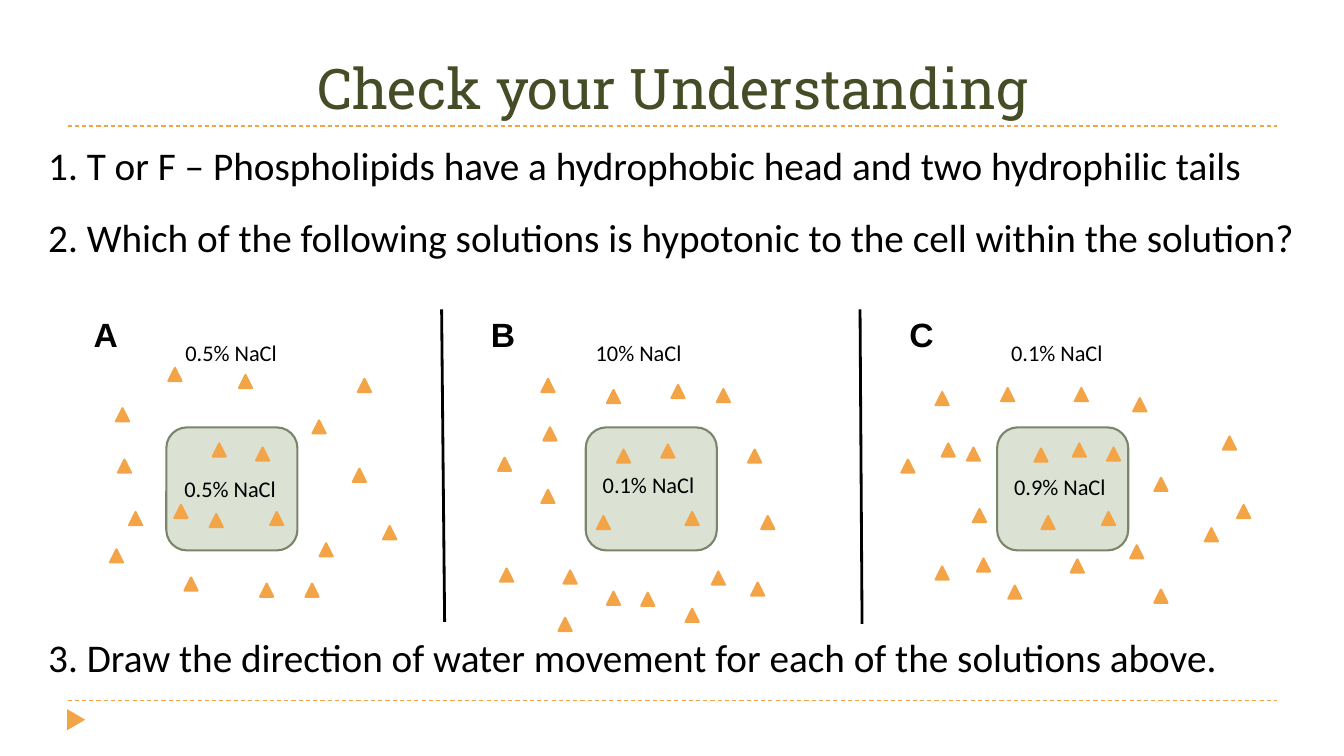
from lxml.etree import SubElement
from pptx import Presentation
from pptx.dml.color import RGBColor
from pptx.enum.dml import MSO_LINE
from pptx.enum.shapes import MSO_CONNECTOR, MSO_SHAPE
from pptx.enum.text import MSO_ANCHOR, PP_ALIGN
from pptx.oxml.ns import qn
from pptx.util import Inches, Pt

ORANGE, OLIVE, BLACK = "F3A447", "444D26", "000000"
SAGE, MOSS = "DBE1D3", "7A866C"
GRAIN = 1.3
CELL = (13, 12.2)
CELL_TOP = 42.4

PANELS = [
    {
        "letter": ("A", 8.3),
        "cell": 16.5,
        "labels": [("0.5% NaCl", 17.4, 33.2), ("0.5% NaCl", 17.3, 46.6)],
        "grains": [
            (11.5, 40.5), (10.9, 54.5), (31.7, 53.9), (11.7, 45.6),
            (16.7, 36.5), (18.3, 57.3), (26.8, 50.8), (17.3, 50.1),
            (25.4, 44.4), (35, 46.5), (20.8, 51), (21.1, 44),
            (31, 41.7), (35.5, 37.6), (23.7, 37.2), (30.3, 57.9),
            (25.8, 57.9), (38, 52.2), (12.8, 50.8),
        ],
    },
    {
        "letter": ("B", 47.7),
        "cell": 58.1,
        "labels": [("10% NaCl", 58.1, 33.2), ("0.1% NaCl", 58.8, 46.3)],
        "grains": [
            (53.7, 37.6), (53.9, 42.4), (60.2, 38.7), (74.2, 44.6),
            (68, 60.4), (75.5, 51.2), (55.9, 56.6), (71.1, 38.6),
            (68, 50.8), (59.2, 51.2), (53.7, 48.6), (65.6, 44.1),
            (74.5, 57.8), (63.6, 58.8), (61.2, 44.6), (66.6, 38.2),
            (60.2, 58.7), (49.4, 45.4), (55.4, 61.3), (70.6, 56.7),
            (49.6, 56.4),
        ],
    },
    {
        "letter": ("C", 89.2),
        "cell": 98.9,
        "labels": [("0.1% NaCl", 99.3, 33.2), ("0.9% NaCl", 99.6, 46.4)],
        "grains": [
            (92.8, 38.9), (112.4, 39.5), (95.9, 44.4), (99.3, 38.5),
            (114.5, 47.4), (106.6, 38.5), (96.5, 50.5), (106.2, 55.5),
            (100, 58.1), (112.1, 54.1), (109.8, 44.4), (121.3, 43.3),
            (93.4, 44), (89.4, 45.6), (96.9, 55.4), (92.8, 56.2),
            (103.3, 51.2), (109.3, 50.8), (102.6, 44.5), (119.5, 52.4),
            (122.7, 50.1), (114.5, 58.5), (106.4, 44),
        ],
    },
]


def grid(*cells):
    """Turn columns and rows of a tenth of an inch into lengths."""
    return [Inches(cell / 10) for cell in cells]


def paint(color):
    """Return the colour for a hex string."""
    return RGBColor.from_string(color)


def add_line(slide, ends, color, width, dash=None):
    """Draw a straight line between two grid points."""
    line = slide.shapes.add_connector(MSO_CONNECTOR.STRAIGHT, *grid(*ends))
    line.line.color.rgb = paint(color)
    line.line.width = Pt(width)
    if dash:
        line.line.dash_style = dash
    SubElement(line._element.spPr, qn("a:effectLst"))


def add_form(slide, kind, box, fill, edge=None):
    """Draw a filled preset shape, with an edge if one is given."""
    form = slide.shapes.add_shape(kind, *grid(*box))
    form.shadow.inherit = False
    form.fill.solid()
    form.fill.fore_color.rgb = paint(fill)
    if edge:
        form.line.color.rgb = paint(edge)
        form.line.width = Pt(1.5)
    else:
        form.line.fill.background()
    return form


def add_text(slide, box, lines, font, size, color=BLACK, bold=False,
             align=PP_ALIGN.LEFT, anchor=MSO_ANCHOR.TOP, gap=0):
    """Write lines of text in one box."""
    frame = slide.shapes.add_textbox(*grid(*box)).text_frame
    frame.word_wrap = True
    frame.vertical_anchor = anchor
    frame.text = "\n".join(lines)
    for part in frame.paragraphs:
        part.alignment = align
        part.space_after = Pt(gap)
        for run in part.runs:
            run.font.name = font
            run.font.size = Pt(size)
            run.font.bold = bold
            run.font.color.rgb = paint(color)


def add_panel(slide, panel):
    """Draw one cell in its solution with labels and grains."""
    add_form(slide, MSO_SHAPE.ROUNDED_RECTANGLE,
             (panel["cell"], CELL_TOP, *CELL), SAGE, MOSS)
    letter, left = panel["letter"]
    add_text(slide, (left, 30.7, 3.3, 5), [letter], "Arial", 24, bold=True)
    for label, left, top in panel["labels"]:
        add_text(slide, (left, top, 13, 3.7), [label], "Calibri", 16)
    for left, top in panel["grains"]:
        add_form(slide, MSO_SHAPE.ISOSCELES_TRIANGLE,
                 (left, top, GRAIN, GRAIN), ORANGE, ORANGE)


def main():
    """Build the slide and save it."""
    deck = Presentation()
    deck.slide_width, deck.slide_height = grid(133.3, 75)
    slide = deck.slides.add_slide(deck.slide_layouts[6])
    for row in (69.5, 12.5):
        add_line(slide, (6.7, row, 126.7, row), ORANGE, 0.75, MSO_LINE.DASH)
    mark = add_form(slide, MSO_SHAPE.ISOSCELES_TRIANGLE,
                    (6.5, 70.5, 2.1, 1.8), ORANGE)
    mark.rotation = 90
    add_text(slide, (6.7, 1.7, 120, 10.8), ["Check your Understanding"],
             "Roboto Slab", 40, OLIVE,
             align=PP_ALIGN.CENTER, anchor=MSO_ANCHOR.BOTTOM)
    add_text(slide, (3.8, 13.5, 126.1, 13), [
        "1. T or F – Phospholipids have a hydrophobic head and two hydrophilic tails",
        "2. Which of the following solutions is hypotonic to the cell within the solution?",
    ], "Calibri", 28, gap=18)
    add_text(slide, (3.8, 62.3, 126.1, 6), [
        "3. Draw the direction of water movement for each of the solutions above.",
    ], "Calibri", 28)
    for ends in ((43.8, 30.7, 44.1, 61.7), (85.3, 30.7, 85.5, 61.9)):
        add_line(slide, ends, BLACK, 2)
    for panel in PANELS:
        add_panel(slide, panel)
    deck.save("out.pptx")


if __name__ == "__main__":
    main()
